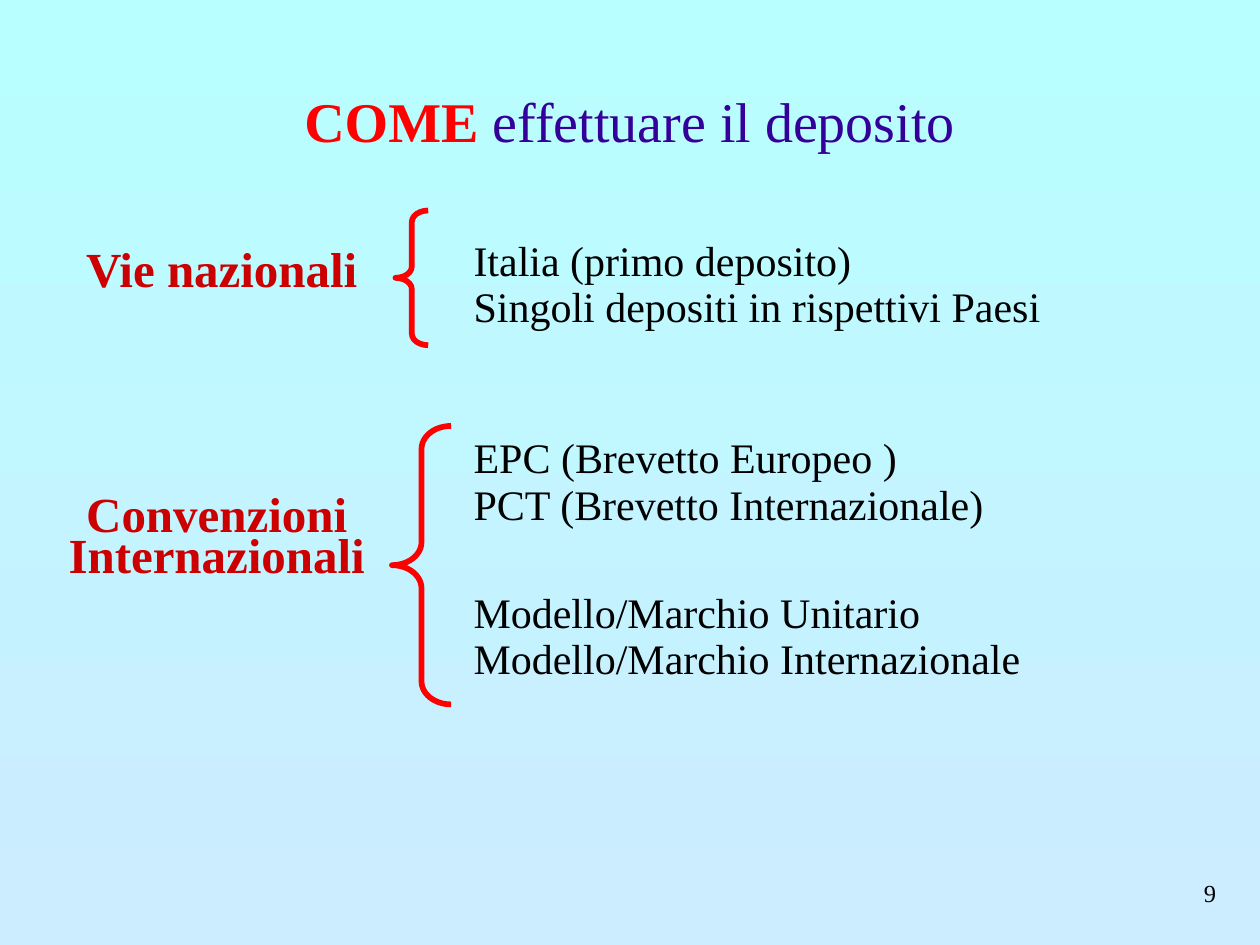
from pptx import Presentation
from pptx.dml.color import RGBColor
from pptx.enum.shapes import MSO_SHAPE
from pptx.enum.text import MSO_ANCHOR, PP_ALIGN
from pptx.util import Pt

LEFT, CENTER, RIGHT = PP_ALIGN.LEFT, PP_ALIGN.CENTER, PP_ALIGN.RIGHT
TOP, MIDDLE = MSO_ANCHOR.TOP, MSO_ANCHOR.MIDDLE
LEFT_BRACE = MSO_SHAPE.LEFT_BRACE

FONT = "Times New Roman"
SKY_TOP = RGBColor(0xB8, 0xFF, 0xFF)
SKY_BOTTOM = RGBColor(0xCC, 0xEC, 0xFF)
RED = RGBColor(0xFF, 0x00, 0x00)
DARK_RED = RGBColor(0xCC, 0x00, 0x00)
INDIGO = RGBColor(0x33, 0x00, 0x99)
BLACK = RGBColor(0x00, 0x00, 0x00)

# Each filing route with the space above it
ROUTES = [
    ("Italia (primo deposito)", 0),
    ("Singoli depositi in rispettivi Paesi", 4.8),
    ("EPC (Brevetto Europeo )", 65),
    ("PCT (Brevetto Internazionale)", 4.8),
    ("Modello/Marchio Unitario", 40.4),
    ("Modello/Marchio Internazionale", 4.8),
]


def paint_background(slide):
    fill = slide.background.fill
    fill.gradient()
    fill.gradient_angle = 270
    for stop, color in zip(fill.gradient_stops, (SKY_TOP, SKY_BOTTOM)):
        stop.color.rgb = color


def add_frame(slide, left, top, width, height, anchor=TOP):
    box = slide.shapes.add_textbox(Pt(left), Pt(top), Pt(width), Pt(height))
    frame = box.text_frame
    frame.word_wrap = True
    frame.vertical_anchor = anchor
    return frame


def add_run(paragraph, text, size, color, bold=False):
    run = paragraph.add_run()
    run.text = text
    font = run.font
    font.name, font.size, font.bold = FONT, Pt(size), bold
    font.color.rgb = color


def add_title(slide):
    title = add_frame(slide, 0, 23.75, 720, 90, MIDDLE).paragraphs[0]
    title.alignment = CENTER
    add_run(title, "COME ", 32, RED, bold=True)
    add_run(title, "effettuare il deposito", 32, INDIGO)


def add_page_number(slide, number):
    footer = add_frame(slide, 552, 492, 150, 36, MIDDLE).paragraphs[0]
    footer.alignment = RIGHT
    add_run(footer, number, 14, BLACK)


def add_label(slide, text, left, top, height):
    label = add_frame(slide, left, top, 188.6, height).paragraphs[0]
    label.alignment = CENTER
    label.line_spacing = 0.7
    add_run(label, text, 28, DARK_RED, bold=True)


def add_routes(slide):
    frame = add_frame(slide, 226, 137, 494, 329)
    frame.margin_left = Pt(44.6)
    for index, (text, space) in enumerate(ROUTES):
        route = frame.add_paragraph() if index else frame.paragraphs[0]
        route.alignment = LEFT
        route.line_spacing = 0.75
        if index:
            route.space_before = Pt(space)
        add_run(route, text, 24, BLACK)


def add_brace(slide, left, top, width, height, curve):
    brace = slide.shapes.add_shape(
        LEFT_BRACE, Pt(left), Pt(top), Pt(width), Pt(height))
    brace.adjustments[0] = curve
    brace.adjustments[1] = 0.5
    brace.shadow.inherit = False
    brace.fill.background()
    brace.line.color.rgb = RED
    brace.line.width = Pt(3.25)


def main():
    prs = Presentation()
    prs.slide_width, prs.slide_height = Pt(720), Pt(540)
    slide = prs.slides.add_slide(prs.slide_layouts[6])

    paint_background(slide)
    add_title(slide)
    add_page_number(slide, "9")
    add_routes(slide)

    # National routes
    add_label(slide, "Vie nazionali", 32.4, 142, 41)
    add_brace(slide, 226, 120.3, 18.7, 77, 0.35)

    # International conventions
    add_label(slide, "Convenzioni Internazionali", 29.5, 282, 74)
    add_brace(slide, 224, 243.4, 33.8, 159.1, 0.39)

    prs.save("out.pptx")


if __name__ == "__main__":
    main()
